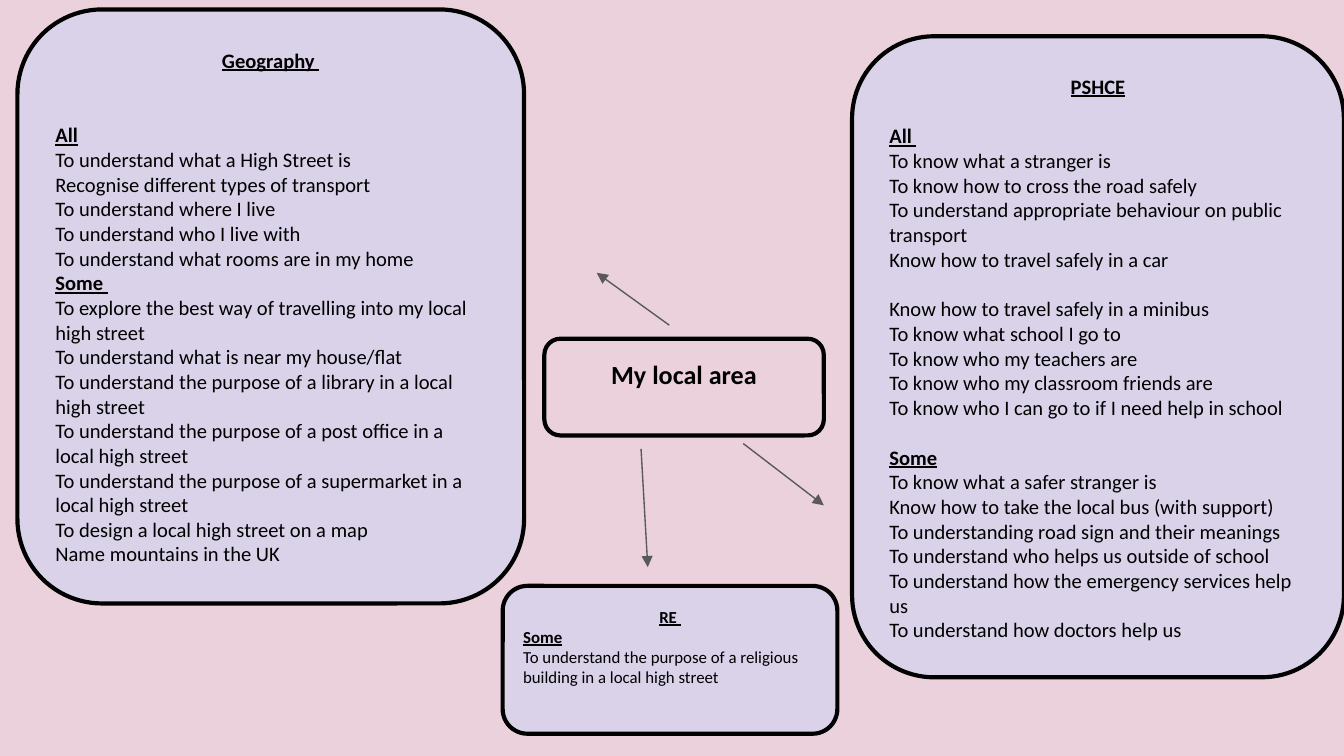
from pptx import Presentation
from pptx import util as u
from pptx.dml.color import RGBColor
from pptx.enum import shapes, text
from pptx.oxml.ns import qn
from lxml import etree

PINK, LILAC, BLACK, GREY = "EAD1DC", "D9D2E9", "000000", "595959"
HEADINGS = ("All", "Some")


def colour(value):
    return RGBColor.from_string(value)


def add_card(page, place, fill, lines, size, gaps):
    """Rounded card with a centred title; gaps maps line index to points before it."""
    box = page.shapes.add_shape(shapes.MSO_SHAPE.ROUNDED_RECTANGLE, *map(u.Inches, place))
    box.adjustments[0] = 0.167
    box.shadow.inherit = False
    box.fill.solid()
    box.fill.fore_color.rgb = colour(fill)
    box.line.color.rgb = colour(BLACK)
    box.line.width = u.Pt(2.25)
    frame = box.text_frame
    frame.word_wrap = True
    frame.vertical_anchor = text.MSO_ANCHOR.TOP
    frame.margin_left = frame.margin_right = u.Inches(0.1)
    frame.margin_top = frame.margin_bottom = u.Inches(0.1)
    frame.text = "\n".join(lines)
    for index, para in enumerate(frame.paragraphs):
        title = index == 0
        heading = title or para.text.strip() in HEADINGS
        para.alignment = text.PP_ALIGN.CENTER if title else text.PP_ALIGN.LEFT
        if index in gaps:
            para.space_before = u.Pt(gaps[index])
        for span in para.runs:
            span.font.name = "Calibri"
            span.font.size = u.Pt(size)
            span.font.color.rgb = colour(BLACK)
            span.font.bold = heading
            span.font.underline = heading
    return box


# Widescreen page, 16:9
deck = Presentation()
deck.slide_width, deck.slide_height = u.Inches(10), u.Inches(10 * 9 / 16)
page = deck.slides.add_slide(deck.slide_layouts[6])
page.background.fill.solid()
page.background.fill.fore_color.rgb = colour(PINK)

# Central topic, set slightly above the middle of its box
topic = add_card(page, (4.05, 2.52, 2.08, 0.72), PINK, ["My local area"], 14, {})
topic.text_frame.vertical_anchor = text.MSO_ANCHOR.MIDDLE
topic.text_frame.margin_bottom = u.Inches(0.3)
topic.text_frame.paragraphs[0].runs[0].font.underline = False

# Subject cards
LINE = 13.4  # height of one 11 pt line
pshce = [
    "PSHCE",
    "All ",
    "To know what a stranger is",
    "To know how to cross the road safely",
    "To understand appropriate behaviour on public transport",
    "Know how to travel safely in a car",
    "Know how to travel safely in a minibus",
    "To know what school I go to",
    "To know who my teachers are",
    "To know who my classroom friends are",
    "To know who I can go to if I need help in school",
    "Some",
    "To know what a safer stranger is",
    "Know how to take the local bus (with support)",
    "To understanding road sign and their meanings",
    "To understand who helps us outside of school",
    "To understand how the emergency services help us",
    "To understand how doctors help us",
]
religion = [
    "RE ",
    "Some",
    "To understand the purpose of a religious building in a local high street",
]
geography = [
    "Geography ",
    "All",
    "To understand what a High Street is",
    "Recognise different types of transport",
    "To understand where I live",
    "To understand who I live with",
    "To understand what rooms are in my home",
    "Some ",
    "To explore the best way of travelling into my local high street",
    "To understand what is near my house/flat",
    "To understand the purpose of a library in a local high street",
    "To understand the purpose of a post office in a local high street",
    "To understand the purpose of a supermarket in a local high street",
    "To design a local high street on a map",
    "Name mountains in the UK",
]
for place, lines, size, gaps in [
    ((6.34, 0.27, 3.66, 4.77), pshce, 11, {1: LINE, 6: LINE, 11: LINE}),
    ((3.74, 4.36, 2.49, 1.1), religion, 9, {}),
    ((0.13, 0.07, 3.77, 4.42), geography, 11, {1: 2 * LINE}),
]:
    add_card(page, place, LILAC, lines, size, gaps)

# Arrows from the topic to the subjects
for ends in [(4.98, 2.42, 4.44, 2.03), (5.53, 3.3, 6.13, 3.76), (4.77, 3.34, 4.82, 4.22)]:
    arrow = page.shapes.add_connector(shapes.MSO_CONNECTOR.STRAIGHT, *map(u.Inches, ends))
    arrow.line.color.rgb = colour(GREY)
    arrow.line.width = u.Pt(0.75)
    properties = arrow._element.spPr
    etree.SubElement(properties.find(qn("a:ln")), qn("a:tailEnd"), type="triangle")
    etree.SubElement(properties, qn("a:effectLst"))

deck.save("out.pptx")
